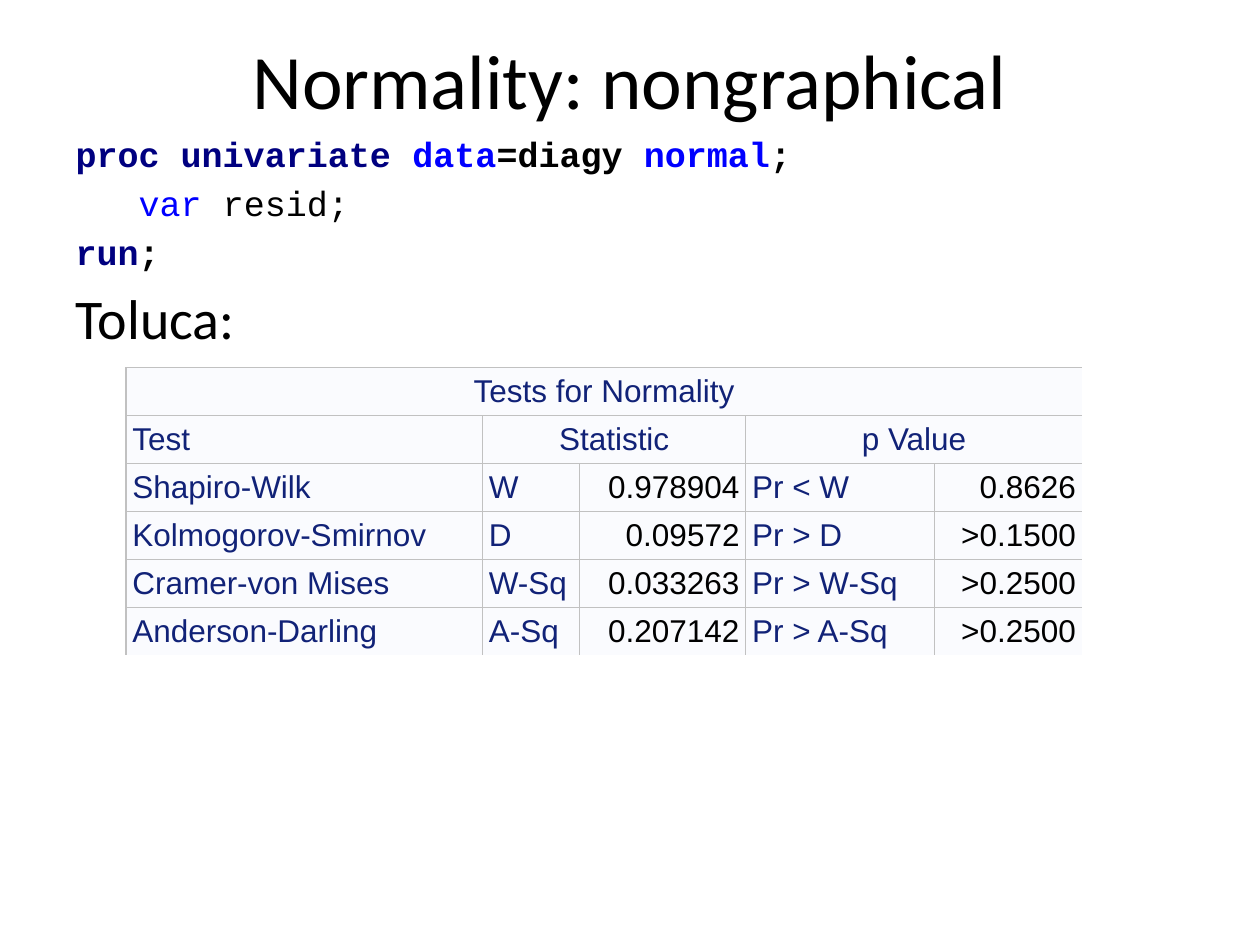
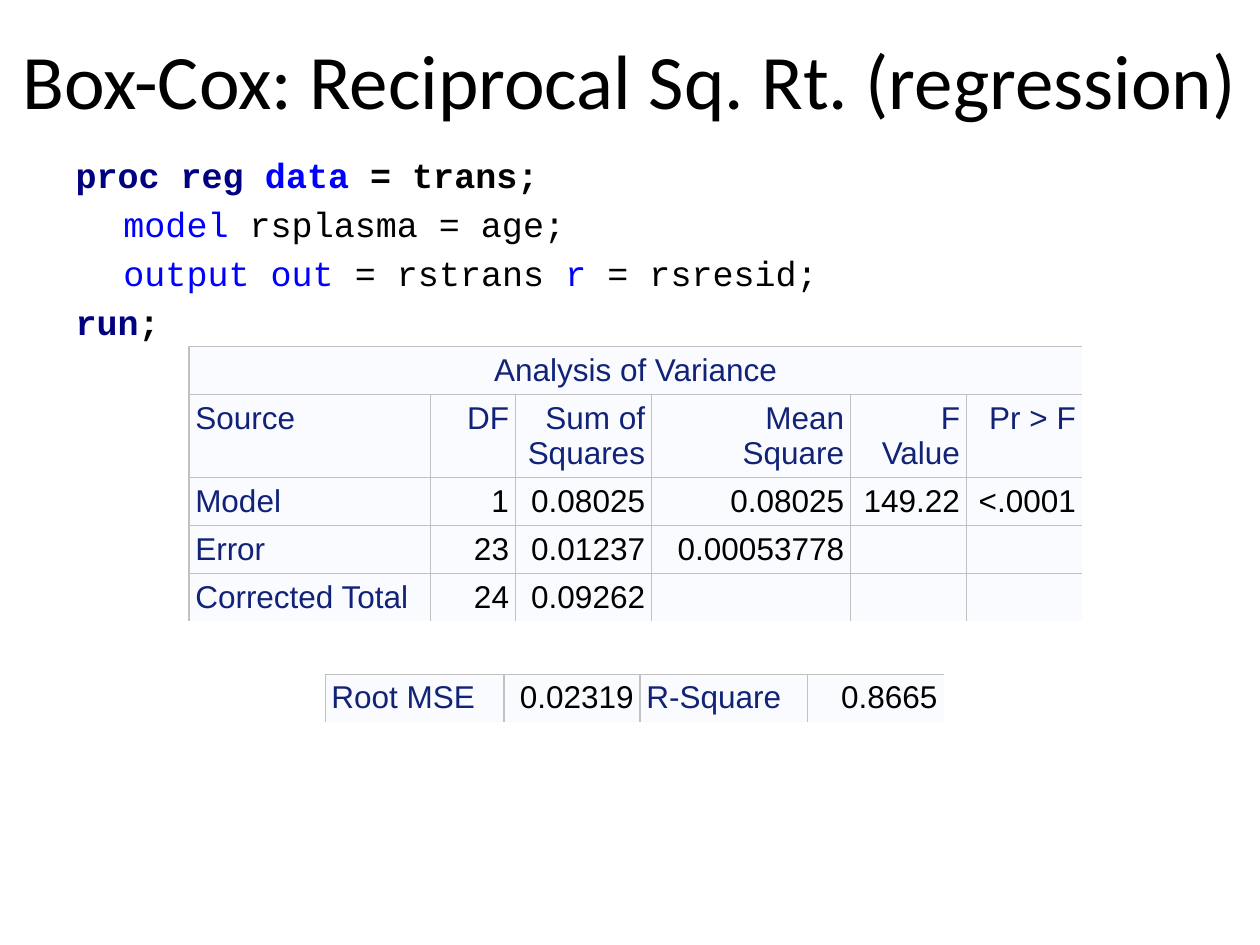
"""Build two slides on regression diagnostics: code listings with their result tables."""
from lxml import etree
from pptx import Presentation
from pptx.dml.color import RGBColor
from pptx.enum import text
from pptx.oxml import ns
from pptx.util import Inches, Pt

BLACK = RGBColor(0x00, 0x00, 0x00)
KEYWORD = RGBColor(0x00, 0x00, 0x80)
OPTION = RGBColor(0x00, 0x00, 0xFF)
LABEL = RGBColor(0x11, 0x22, 0x77)
CELL = RGBColor(0xFA, 0xFB, 0xFE)
RULE = RGBColor(0xC1, 0xC1, 0xC1)

CODE_STYLE = ("Courier New", 20)
PROSE_STYLE = ("Calibri", 32)
HANGING = 0.38
CELL_MARGIN = 0.05
ROW_HEIGHT = 0.38

RUN_LINE = (CODE_STYLE, 0, [("run", KEYWORD), (";", BLACK)])

SLIDES = [
    {
        "title": ("Normality: nongraphical", (0.5, 0, 9, 1.25)),
        "body_box": (0.5, 1, 9.5, 6.5),
        "body": [
            (CODE_STYLE, 0, [("proc univariate ", KEYWORD), ("data", OPTION), ("=diagy ", BLACK),
                             ("normal", OPTION), (";", BLACK)]),
            (CODE_STYLE, 0.5, [("var ", OPTION), ("resid;", BLACK)]),
            RUN_LINE,
            (PROSE_STYLE, 0, [("Toluca:", BLACK)]),
        ],
        "tables": [
            {
                "at": (1, 2.92), "columns": (2.83, 0.77, 1.32, 1.5, 1.17),
                "headers": 2, "values": {2, 4},
                "rows": [
                    [("Tests for Normality", 5)],
                    ["Test", ("Statistic", 2), ("p Value", 2)],
                    ["Shapiro-Wilk", "W", "0.978904", "Pr < W", "0.8626"],
                    ["Kolmogorov-Smirnov", "D", "0.09572", "Pr > D", ">0.1500"],
                    ["Cramer-von Mises", "W-Sq", "0.033263", "Pr > W-Sq", ">0.2500"],
                    ["Anderson-Darling", "A-Sq", "0.207142", "Pr > A-Sq", ">0.2500"],
                ],
            },
        ],
    },
    {
        "title": ("Box-Cox: Reciprocal Sq. Rt. (regression)", (0, 0, 10, 1.25)),
        "body_box": (0.5, 1.17, 9.5, 3.25),
        "body": [
            (CODE_STYLE, 0, [("proc reg ", KEYWORD), ("data", OPTION), (" = trans;", BLACK)]),
            (CODE_STYLE, HANGING, [("model ", OPTION), ("rsplasma = age;", BLACK)]),
            (CODE_STYLE, HANGING, [("output out", OPTION), (" = rstrans ", BLACK),
                                   ("r", OPTION), (" = rsresid;", BLACK)]),
            RUN_LINE,
        ],
        "tables": [
            {
                "at": (1.5, 2.75), "columns": (1.92, 0.67, 1.08, 1.58, 0.92, 0.92),
                "headers": 2, "values": {1, 2, 3, 4, 5},
                "rows": [
                    [("Analysis of Variance", 6)],
                    ["Source", "DF", "Sum of\nSquares", "Mean\nSquare", "F Value", "Pr > F"],
                    ["Model", "1", "0.08025", "0.08025", "149.22", "<.0001"],
                    ["Error", "23", "0.01237", "0.00053778", "", ""],
                    ["Corrected Total", "24", "0.09262", "", "", ""],
                ],
            },
            {
                "at": (2.58, 5.35), "columns": (1.42, 1.08, 1.33, 1.08),
                "headers": 0, "values": {1, 3},
                "rows": [["Root MSE", "0.02319", "R-Square", "0.8665"]],
            },
        ],
    },
]


def place(holder, box):
    holder.left, holder.top, holder.width, holder.height = map(Inches, box)


def style(font, name, size, color=None):
    font.name, font.size = name, Pt(size)
    if color is not None:
        font.color.rgb = color


def fill_title(holder, wording, box):
    place(holder, box)
    heading = holder.text_frame.paragraphs[0]
    heading.text = wording
    style(heading.font, "Calibri", 44, BLACK)


def fill_body(holder, lines, box):
    place(holder, box)
    frame = holder.text_frame
    for number, (face, indent, pieces) in enumerate(lines):
        line = frame.add_paragraph() if number else frame.paragraphs[0]
        style(line.font, *face)
        line.font.bold = face == CODE_STYLE and indent == 0
        properties = line._p.get_or_add_pPr()
        properties.set("marL", str(Inches(indent or HANGING)))
        properties.set("indent", str(0 if indent else -Inches(HANGING)))
        properties.insert(0, etree.Element(ns.qn("a:buNone")))
        for wording, color in pieces:
            piece = line.add_run()
            piece.text = wording
            piece.font.color.rgb = color


def rule_cell(cell, sides):
    """Draw the listed sides of a cell and blank the others."""
    properties = cell._tc.get_or_add_tcPr()
    for side in "LRTB":
        edge = etree.SubElement(properties, ns.qn(f"a:ln{side}"), w=str(Pt(0.75)))
        if side in sides:
            solid = etree.SubElement(edge, ns.qn("a:solidFill"))
            etree.SubElement(solid, ns.qn("a:srgbClr"), val=str(RULE))
        else:
            etree.SubElement(edge, ns.qn("a:noFill"))


def add_results(slide, results):
    rows, columns = results["rows"], results["columns"]
    height = Inches(ROW_HEIGHT * len(rows))
    grid = slide.shapes.add_table(len(rows), len(columns), *map(Inches, results["at"]),
                                  Inches(sum(columns)), height).table
    grid.first_row = grid.horz_banding = False
    for column, width in zip(grid.columns, columns):
        column.width = Inches(width)
    for r, row in enumerate(rows):
        c = 0
        for entry in row:
            wording, span = entry if isinstance(entry, tuple) else (entry, 1)
            cell = grid.cell(r, c)
            if span > 1:
                cell.merge(grid.cell(r, c + span - 1))
            is_value = c in results["values"]
            rule_cell(cell, "LT" + "R" * (c + span < len(columns)) + "B" * (r + 1 < len(rows)))
            cell.fill.solid()
            cell.fill.fore_color.rgb = CELL
            cell.margin_left = cell.margin_right = Inches(CELL_MARGIN)
            cell.margin_top = cell.margin_bottom = Inches(CELL_MARGIN)
            line = cell.text_frame.paragraphs[0]
            line.text = wording
            line.alignment = (text.PP_ALIGN.CENTER if span > 1 else
                              text.PP_ALIGN.RIGHT if is_value else text.PP_ALIGN.LEFT)
            style(line.font, "Arial", 18, BLACK if is_value and r >= results["headers"] else LABEL)
            c += span


def main():
    deck = Presentation()
    deck.slide_width, deck.slide_height = Inches(10), Inches(7.5)
    for content in SLIDES:
        slide = deck.slides.add_slide(deck.slide_layouts[1])
        fill_title(slide.shapes.title, *content["title"])
        fill_body(slide.placeholders[1], content["body"], content["body_box"])
        for results in content["tables"]:
            add_results(slide, results)
    deck.save("out.pptx")


if __name__ == "__main__":
    main()
